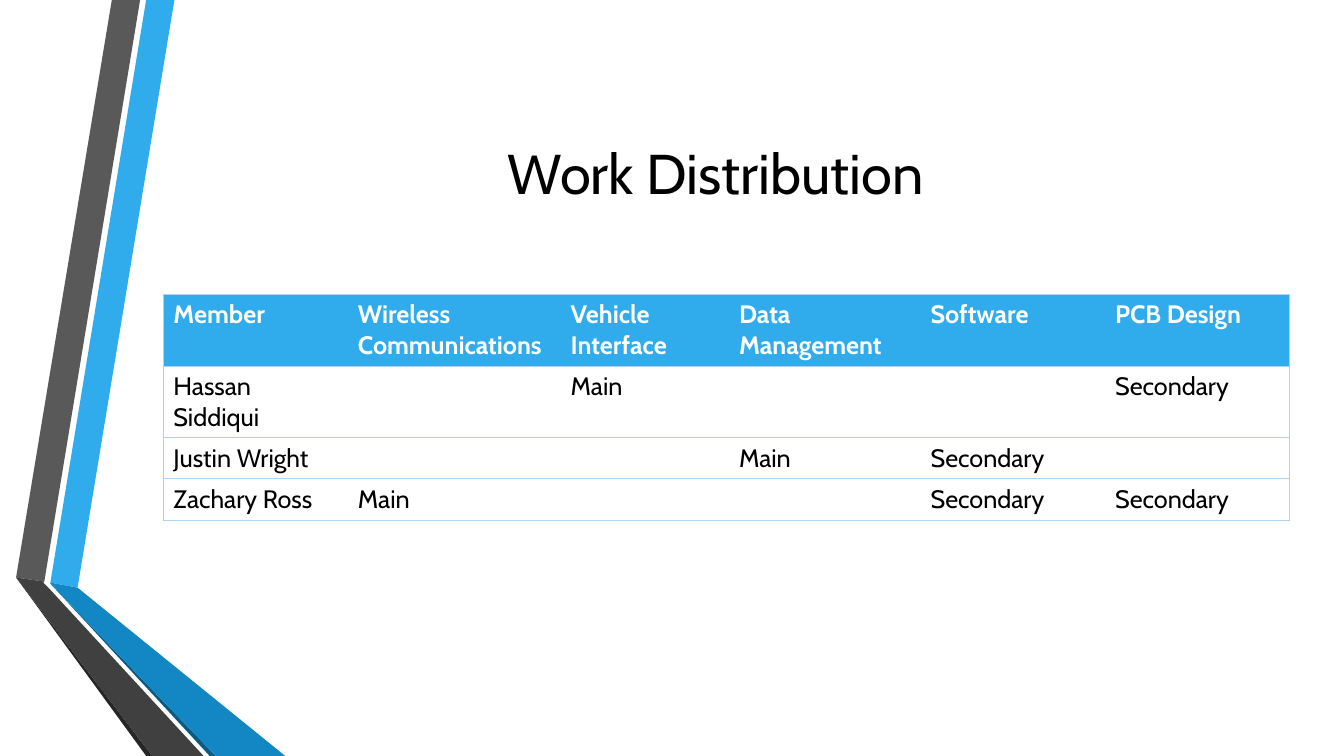
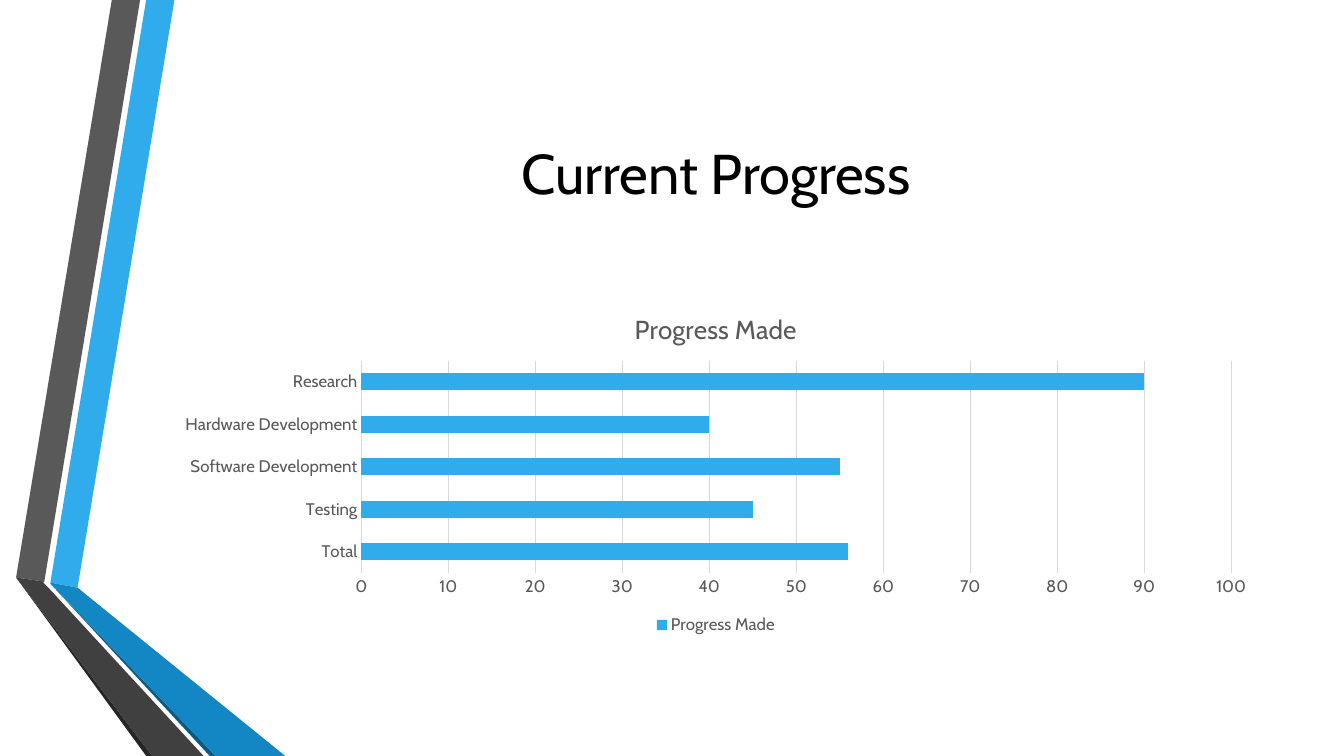
"""Builds a two-slide project status deck: a work table and a progress chart."""
from lxml import etree
from pptx import Presentation
from pptx.chart.data import CategoryChartData
from pptx.dml.color import RGBColor
from pptx.enum.chart import XL_CHART_TYPE, XL_LEGEND_POSITION, XL_TICK_MARK
from pptx.enum.text import MSO_ANCHOR, PP_ALIGN
from pptx.oxml.ns import qn
from pptx.util import Inches, Pt

BAR_STACKED = XL_CHART_TYPE.BAR_STACKED
LEGEND_BOTTOM = XL_LEGEND_POSITION.BOTTOM
NO_TICK = XL_TICK_MARK.NONE
MIDDLE = MSO_ANCHOR.MIDDLE
CENTER = PP_ALIGN.CENTER

FONT = "Cabin"
BLUE, WHITE, BLACK = "30ACEC", "FFFFFF", "000000"
BORDER, GRAY, GRID = "AED2F4", "595959", "D9D9D9"
LEFT, TITLE_TOP, BODY_TOP = 1.62, 0.75, 2.92
WIDTH, TITLE_HEIGHT, CHART_HEIGHT = 10.96, 1.92, 3.42
ROW_HEIGHT = 0.41

RIBBONS = [
    (BLUE, [(0.5, 5.78), (0.77, 5.83), (1.73, 0), (1.45, 0)]),
    (GRAY, [(1.39, 0), (1.11, 0), (0.16, 5.73), (0.44, 5.77)]),
    ("262626", [(0.16, 5.73), (1.45, 7.5), (1.51, 7.5)]),
    ("0C5A82", [(0.5, 5.79), (2.08, 7.5), (2.14, 7.5)]),
    ("1287C3", [(0.5, 5.79), (2.14, 7.5), (2.83, 7.5), (0.77, 5.83), (0.5, 5.78)]),
    ("404040", [(2.02, 7.5), (0.48, 5.83), (0.43, 5.78), (0.44, 5.77), (0.16, 5.73), (1.51, 7.5)]),
]

COLUMNS = [
    ("Member", 1.83),
    ("Wireless Communications", 2.11),
    ("Vehicle Interface", 1.67),
    ("Data Management", 1.9),
    ("Software", 1.83),
    ("PCB Design", 1.83),
]
MEMBERS = [
    ("Hassan Siddiqui", "", "Main", "", "", "Secondary"),
    ("Justin Wright", "", "", "Main", "Secondary", ""),
    ("Zachary Ross", "Main", "", "", "Secondary", "Secondary"),
]

SERIES = "Progress Made"
PROGRESS = {
    "Total": 56,
    "Testing": 45,
    "Software Development": 55,
    "Hardware Development": 40,
    "Research": 90,
}


def rgb(color):
    return RGBColor.from_string(color)


def set_font(font, size, color, bold=False):
    font.name, font.size, font.bold = FONT, Pt(size), bold
    font.color.rgb = rgb(color)


def set_line(line, color):
    line.color.rgb = rgb(color)
    line.width = Pt(0.75)


def add_ribbons(layout, s):
    """Draw the ribbons on a slide and move them to the layout behind its text."""
    for i, (color, points) in enumerate(RIBBONS):
        start, *rest = [(Inches(x), Inches(y)) for x, y in points]
        builder = s.shapes.build_freeform(*start)
        builder.add_line_segments(rest)
        sp = builder.convert_to_shape()
        sp.shadow.inherit = False
        sp.fill.solid()
        sp.fill.fore_color.rgb = rgb(color)
        sp.line.fill.background()
        sp.name = f"Ribbon {i + 1}"
        sp.element.nvSpPr.cNvPr.set("id", str(100 + i))
        layout.shapes.element.insert(2 + i, sp.element)


def add_slide(prs, layout, title):
    s = prs.slides.add_slide(layout)
    sp = s.shapes.title
    sp.left, sp.top = Inches(LEFT), Inches(TITLE_TOP)
    sp.width, sp.height = Inches(WIDTH), Inches(TITLE_HEIGHT)
    tf = sp.text_frame
    tf.text = title
    tf.vertical_anchor = MIDDLE
    p = tf.paragraphs[0]
    p.alignment = CENTER
    set_font(p.font, 40, BLACK)
    return s


def set_borders(cell, visible):
    """Draw the cell sides named in visible and hide the others."""
    tc_pr = cell._tc.get_or_add_tcPr()
    for side in "LRTB":
        ln = etree.SubElement(tc_pr, qn(f"a:ln{side}"), w=str(Pt(0.75)))
        if side in visible:
            fill = etree.SubElement(ln, qn("a:solidFill"))
            etree.SubElement(fill, qn("a:srgbClr"), val=BORDER)
        else:
            etree.SubElement(ln, qn("a:noFill"))


def add_work_table(s):
    rows = [[name for name, _ in COLUMNS], *MEMBERS]
    width = sum(w for _, w in COLUMNS)
    table = s.shapes.add_table(
        len(rows), len(COLUMNS), Inches(LEFT), Inches(BODY_TOP),
        Inches(width), Inches(ROW_HEIGHT * len(rows))).table
    table.horz_banding = False
    for column, (_, w) in zip(table.columns, COLUMNS):
        column.width = Inches(w)
    for r, texts in enumerate(rows):
        table.rows[r].height = Inches(ROW_HEIGHT)
        header = r == 0
        for c, text in enumerate(texts):
            cell = table.cell(r, c)
            cell.text = text
            set_font(cell.text_frame.paragraphs[0].font, 18, WHITE if header else BLACK, header)
            edges = "L" if c == 0 else "R" if c == len(COLUMNS) - 1 else ""
            set_borders(cell, "TB" + edges)
            cell.fill.solid()
            cell.fill.fore_color.rgb = rgb(BLUE if header else WHITE)


def add_progress_chart(s):
    data = CategoryChartData()
    data.categories = list(PROGRESS)
    data.add_series(SERIES, list(PROGRESS.values()))
    chart = s.shapes.add_chart(
        BAR_STACKED, Inches(LEFT), Inches(BODY_TOP),
        Inches(WIDTH), Inches(CHART_HEIGHT), data).chart
    set_font(chart.font, 10, BLACK)

    chart.has_title = True
    tf = chart.chart_title.text_frame
    tf.text = SERIES
    set_font(tf.paragraphs[0].font, 18.6, GRAY)
    chart.chart_title.include_in_layout = False

    chart.has_legend = True
    chart.legend.position = LEGEND_BOTTOM
    chart.legend.include_in_layout = False
    set_font(chart.legend.font, 12, GRAY)

    plot = chart.plots[0]
    plot.gap_width, plot.overlap = 150, 100
    plot.vary_by_categories = False
    fill = plot.series[0].format.fill
    fill.solid()
    fill.fore_color.rgb = rgb(BLUE)

    category, value = chart.category_axis, chart.value_axis
    for axis in (category, value):
        axis.major_tick_mark = axis.minor_tick_mark = NO_TICK
        set_font(axis.tick_labels.font, 12, GRAY)
    set_line(category.format.line, GRID)
    value.format.line.fill.background()
    value.minimum_scale, value.maximum_scale, value.major_unit = 0, 100, 10
    value.has_major_gridlines = True
    set_line(value.major_gridlines.format.line, GRID)


def main():
    prs = Presentation()
    prs.slide_width, prs.slide_height = Inches(13.33), Inches(7.5)
    layout = prs.slide_layouts.get_by_name("Title Only")
    work = add_slide(prs, layout, "Work Distribution")
    add_ribbons(layout, work)
    add_work_table(work)
    add_progress_chart(add_slide(prs, layout, "Current Progress"))
    prs.save("out.pptx")


if __name__ == "__main__":
    main()
